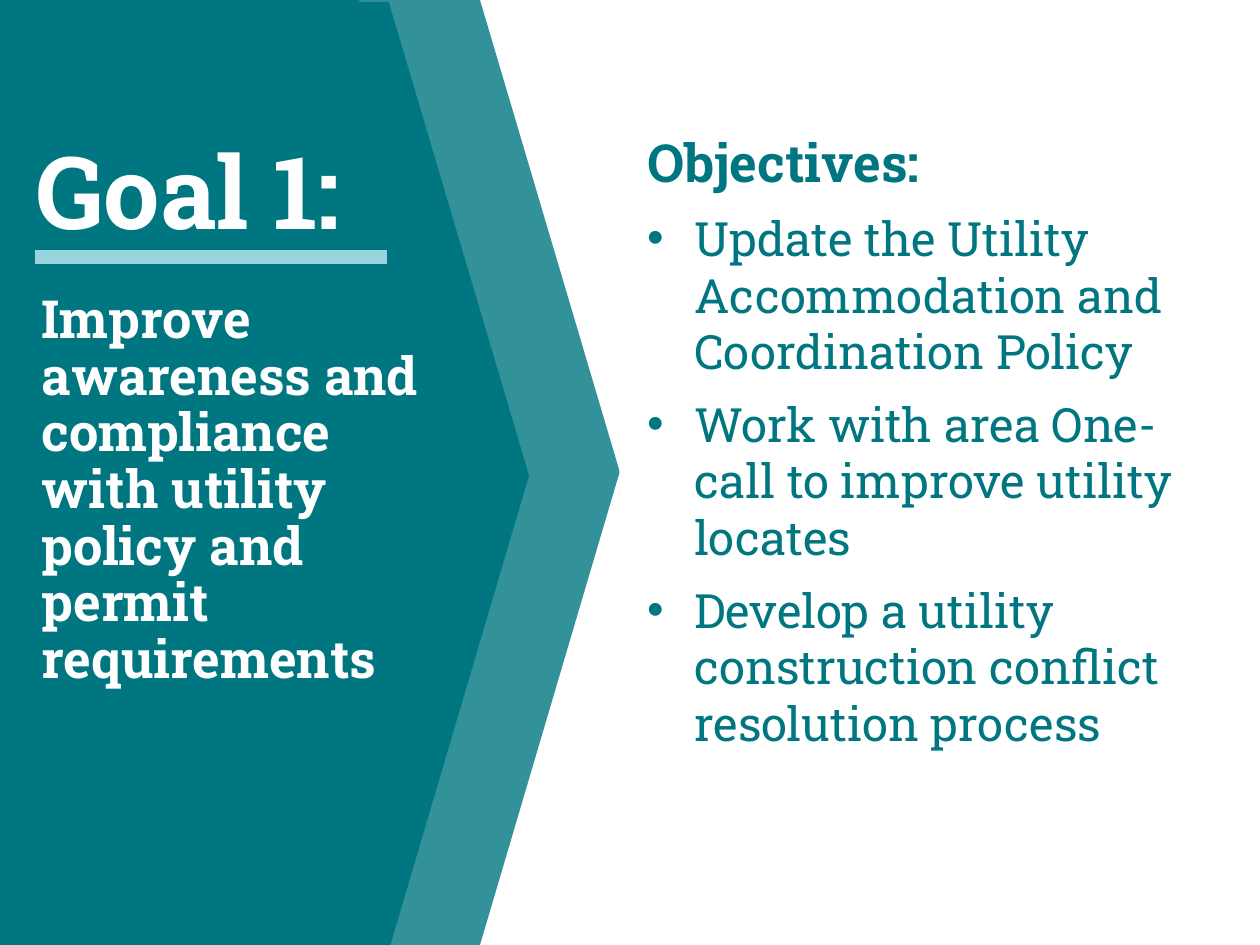
from lxml import etree
from pptx import Presentation
from pptx.dml.color import RGBColor
from pptx.enum.shapes import MSO_CONNECTOR, MSO_SHAPE
from pptx.enum.text import MSO_ANCHOR, MSO_AUTO_SIZE, PP_ALIGN
from pptx.oxml.ns import qn
from pptx.util import Inches, Pt

LEFT = PP_ALIGN.LEFT
TOP, MIDDLE = MSO_ANCHOR.TOP, MSO_ANCHOR.MIDDLE
NO_FIT = MSO_AUTO_SIZE.NONE
RECT, STRAIGHT = MSO_SHAPE.RECTANGLE, MSO_CONNECTOR.STRAIGHT

# The slide is a grid of one-inch cells
COLS, ROWS = 20, 15
FONT = "Roboto Slab"
COLORS = {"teal": "007681", "rule": "97D4DE", "white": "FFFFFF"}
TWO_CONTENT = 3

# Chevron outline, relative to its top left corner
CHEVRON = [(0, 0), (2.3, 0), (4.51, 7.46), (4.52, 7.5), (4.52, 7.55),
           (4.5, 7.61), (2.3, 15.06), (0, 15.06)]

GOAL = ("Improve awareness and compliance with utility policy "
        "and permit requirements")
OBJECTIVES = [
    "Update the Utility Accommodation and Coordination Policy",
    "Work with area One-call to improve utility locates",
    "Develop a utility construction conflict resolution process",
]


def color(name):
    return RGBColor.from_string(COLORS[name])


def paint(sp, name, alpha=None):
    """Flat fill without outline or shadow; alpha is a percentage."""
    sp.shadow.inherit = False
    sp.line.fill.background()
    sp.fill.solid()
    sp.fill.fore_color.rgb = color(name)
    if alpha:
        clr = sp._element.spPr.find(".//" + qn("a:srgbClr"))
        etree.SubElement(clr, qn("a:alpha"), val=str(alpha * 1000))


def add_panel(s, x, y, w, h, name):
    sp = s.shapes.add_shape(RECT, *map(Inches, (x, y, w, h)))
    paint(sp, name)


def add_chevron(s, x, y, name, alpha=None):
    points = [(Inches(x + dx), Inches(y + dy)) for dx, dy in CHEVRON]
    builder = s.shapes.build_freeform(*points[0])
    builder.add_line_segments(points[1:], close=True)
    paint(builder.convert_to_shape(), name, alpha)


def add_rule(s, x1, x2, y, name, width):
    line = s.shapes.add_connector(STRAIGHT, *map(Inches, (x1, y, x2, y)))
    line.line.color.rgb = color(name)
    line.line.width = Pt(width)
    etree.SubElement(line._element.spPr, qn("a:effectLst"))


def place(s, sp, x, y, w, h, anchor=TOP):
    """Move a placeholder in front of the panels and return its text frame."""
    s.shapes._spTree.append(sp._element)
    sp.left, sp.top, sp.width, sp.height = map(Inches, (x, y, w, h))
    tf = sp.text_frame
    tf.word_wrap = True
    tf.auto_size = NO_FIT
    tf.vertical_anchor = anchor
    return tf


def add_text(p, text, size, name="teal", bold=False, bullet=False,
             spacing=1.0, after=0):
    pPr = p._p.get_or_add_pPr()
    indent = Inches(0.75) if bullet else 0
    pPr.set("marL", str(indent))
    pPr.set("indent", str(-indent))
    if bullet:
        etree.SubElement(pPr, qn("a:buFont"), typeface="Arial")
        etree.SubElement(pPr, qn("a:buChar"), char="•")
    else:
        etree.SubElement(pPr, qn("a:buNone"))
    p.alignment = LEFT
    p.line_spacing = spacing
    p.space_before = Pt(0)
    p.space_after = Pt(after)
    r = p.add_run()
    r.text = text
    r.font.name = FONT
    r.font.size = Pt(size)
    r.font.bold = bold
    r.font.color.rgb = color(name)


def main():
    prs = Presentation()
    prs.slide_width, prs.slide_height = Inches(COLS), Inches(ROWS)
    s = prs.slides.add_slide(prs.slide_layouts[TWO_CONTENT])
    title, goal, objectives = list(s.placeholders)[:3]

    # Teal panel with two layered chevrons
    add_panel(s, 0, 0, 5.7, ROWS, "teal")
    add_chevron(s, 5.31, -0.03, "teal", alpha=80)
    add_chevron(s, 3.87, 0.03, "teal")

    # Goal
    tf = place(s, title, 0.48, 2.27, 6.78, 1.71, MIDDLE)
    add_text(tf.paragraphs[0], "Goal 1:", 115, "white", bold=True, spacing=0.9)
    add_rule(s, 0.55, 6.15, 4.08, "rule", 15)
    tf = place(s, goal, 0.56, 4.6, 6.29, 7.5)
    add_text(tf.paragraphs[0], GOAL, 60, "white", bold=True, spacing=0.9)

    # Objectives
    tf = place(s, objectives, 10.17, 2.02, 9.41, 10.5)
    add_text(tf.paragraphs[0], "Objectives:", 60, bold=True, after=18)
    for objective in OBJECTIVES:
        add_text(tf.add_paragraph(), objective, 54, bullet=True, after=18)

    prs.save("out.pptx")


if __name__ == "__main__":
    main()
